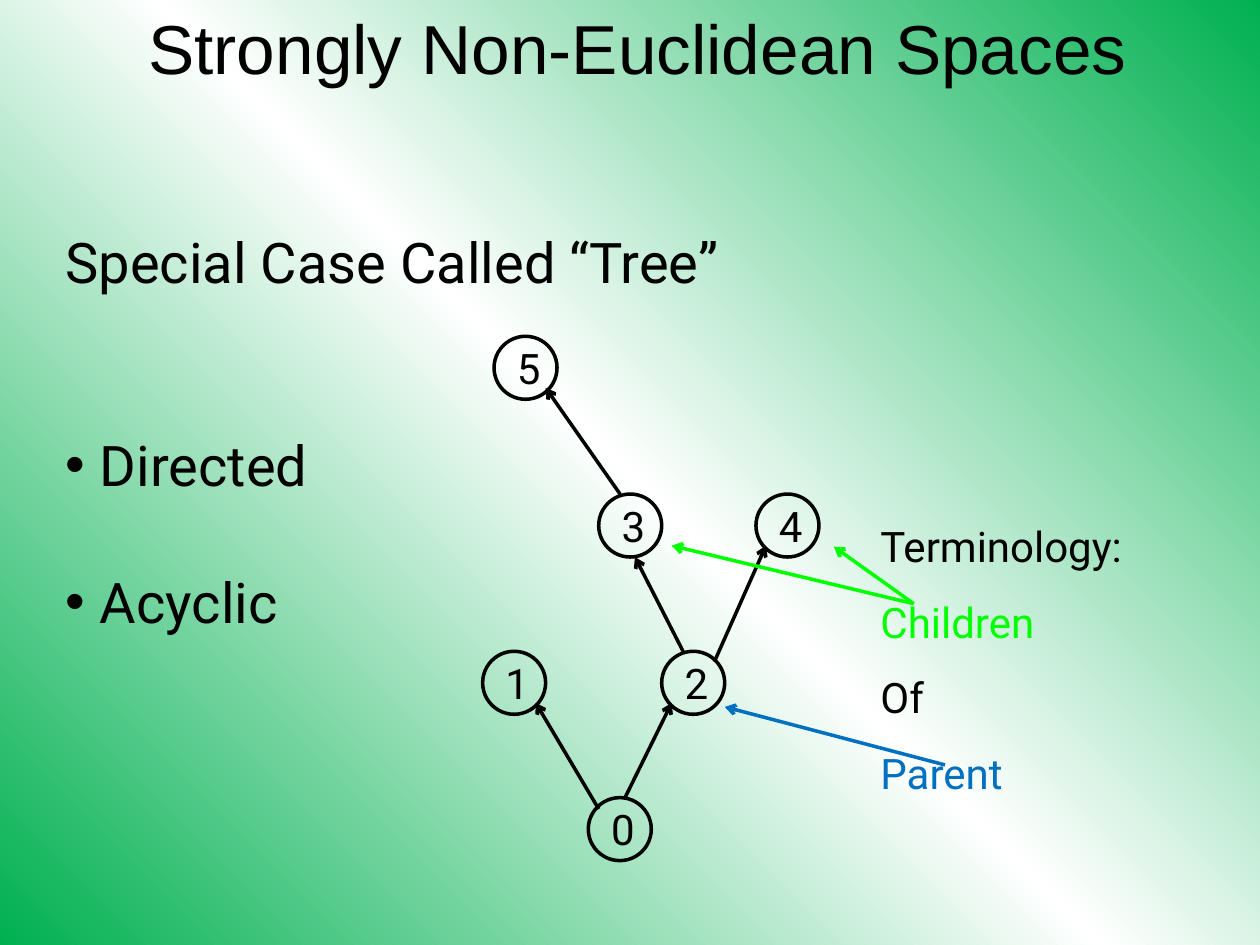
import copy

import pptx
import pptx.dml.color
import pptx.enum.shapes
import pptx.enum.text
import pptx.oxml.ns
import pptx.util

Cm, Pt = pptx.util.Cm, pptx.util.Pt
qn = pptx.oxml.ns.qn

BLACK, GREEN, BLUE = "000000", "00FF00", "0070C0"
BACKDROP = ["00B050", "FFFFFF", "00B050"]

TITLE = "Strongly Non-Euclidean Spaces"
TITLE_AREA = (2.74, 0, 20.75, 2.11)
BODY_AREA = (1.07, 4.45, 14.4, 8.46)
BODY = [("Special Case Called “Tree”", False, 0),
        ("Directed", True, 78),
        ("Acyclic", True, 39.5)]
BULLET_INDENT = 0.69

NODE_SIZE, LABEL_SHIFT = 1.27, 0.21
NODES = {"0": (11.86, 16.08), "1": (9.73, 13.13), "2": (13.34, 13.13),
         "3": (12.07, 9.96), "4": (15.24, 9.96), "5": (9.96, 6.78)}
ARROWS = [((12.07, 16.31), (10.8, 14.17), BLACK),
          ((12.5, 9.96), (11, 7.82), BLACK),
          ((14.4, 13.34), (15.44, 11), BLACK),
          ((13.77, 13.13), (12.8, 11.23), BLACK),
          ((12.6, 16.08), (13.54, 14.17), BLACK),
          ((18.42, 12.17), (13.54, 11), GREEN),
          ((18.42, 12.17), (16.81, 11.02), GREEN),
          ((19.05, 15.42), (14.61, 14.25), BLUE)]

TERMS_AREA = (17.5, 9.86, 5.99, 6.4)
TERMS = [("Terminology:", BLACK), ("Children", GREEN), ("Of", BLACK), ("Parent", BLUE)]


def color(code):
    return pptx.dml.color.RGBColor.from_string(code)


def lengths(values):
    return [Cm(value) for value in values]


def apply(target, settings):
    for name, value in settings.items():
        setattr(target, name, value)


def place(shape, area):
    apply(shape, dict(zip(("left", "top", "width", "height"), lengths(area))))


def write(frame, lines, size, font="Roboto", **settings):
    for index, (text, code) in enumerate(lines):
        para = frame.paragraphs[0] if index == 0 else frame.add_paragraph()
        apply(para, settings)
        span = para.add_run()
        span.text = text
        apply(span.font, {"name": font, "size": Pt(size)})
        span.font.color.rgb = color(code)


def paint_background(page):
    fill = page.background.fill
    fill.gradient()
    fill.gradient_angle = 225
    first = next(page._element.iter(qn("a:gs")))
    first.addnext(copy.deepcopy(first))
    for index, (stop, code) in enumerate(zip(fill.gradient_stops, BACKDROP)):
        stop.position = index / (len(BACKDROP) - 1)
        stop.color.rgb = color(code)


def fill_title(page):
    title = page.shapes.title
    place(title, TITLE_AREA)
    apply(title.text_frame, {"auto_size": pptx.enum.text.MSO_AUTO_SIZE.NONE,
                             "vertical_anchor": pptx.enum.text.MSO_ANCHOR.MIDDLE})
    write(title.text_frame, [(TITLE, BLACK)], 39.6, "Arial", line_spacing=0.9,
          alignment=pptx.enum.text.PP_ALIGN.LEFT)


def fill_body(page):
    body = page.placeholders[1]
    place(body, BODY_AREA)
    frame = body.text_frame
    frame.auto_size = pptx.enum.text.MSO_AUTO_SIZE.NONE
    write(frame, [(text, BLACK) for text, _, _ in BODY], 32)
    for para, (_, bulleted, gap) in zip(frame.paragraphs, BODY):
        para.space_before = Pt(gap)
        indent = Cm(BULLET_INDENT) if bulleted else 0
        properties = para._p.get_or_add_pPr()
        properties.set("marL", str(indent))
        properties.set("indent", str(-indent))
        if bulleted:
            bullet = properties.makeelement(qn("a:buChar"), {"char": "•"})
        else:
            bullet = properties.makeelement(qn("a:buNone"), {})
        properties.append(bullet)


def add_text(page, area, lines, **settings):
    box = page.shapes.add_textbox(*lengths(area))
    box.text_frame.word_wrap = True
    write(box.text_frame, lines, 24, **settings)


def add_node(page, label, left, top):
    circle = page.shapes.add_shape(pptx.enum.shapes.MSO_SHAPE.OVAL,
                                   *lengths((left, top, NODE_SIZE, NODE_SIZE)))
    circle.shadow.inherit = False
    circle.fill.background()
    circle.line.color.rgb = color(BLACK)
    circle.line.width = Pt(2)
    area = (left + LABEL_SHIFT, top, NODE_SIZE - LABEL_SHIFT, NODE_SIZE)
    add_text(page, area, [(label, BLACK)])


def add_arrow(page, start, end, code):
    arrow = page.shapes.add_connector(pptx.enum.shapes.MSO_CONNECTOR.STRAIGHT,
                                      *lengths(start + end))
    arrow.line.color.rgb = color(code)
    arrow.line.width = Pt(2)
    line = arrow.line._get_or_add_ln()
    line.append(line.makeelement(qn("a:tailEnd"), {"type": "arrow"}))
    line.addnext(line.makeelement(qn("a:effectLst"), {}))


def main():
    deck = pptx.Presentation()
    apply(deck, {"slide_width": Cm(25.4), "slide_height": Cm(19.05)})
    page = deck.slides.add_slide(deck.slide_layouts[1])
    paint_background(page)
    fill_title(page)
    fill_body(page)
    for label, (left, top) in NODES.items():
        add_node(page, label, left, top)
    add_text(page, TERMS_AREA, TERMS, line_spacing=1.5)
    for start, end, code in ARROWS:
        add_arrow(page, start, end, code)
    deck.save("out.pptx")


if __name__ == "__main__":
    main()
